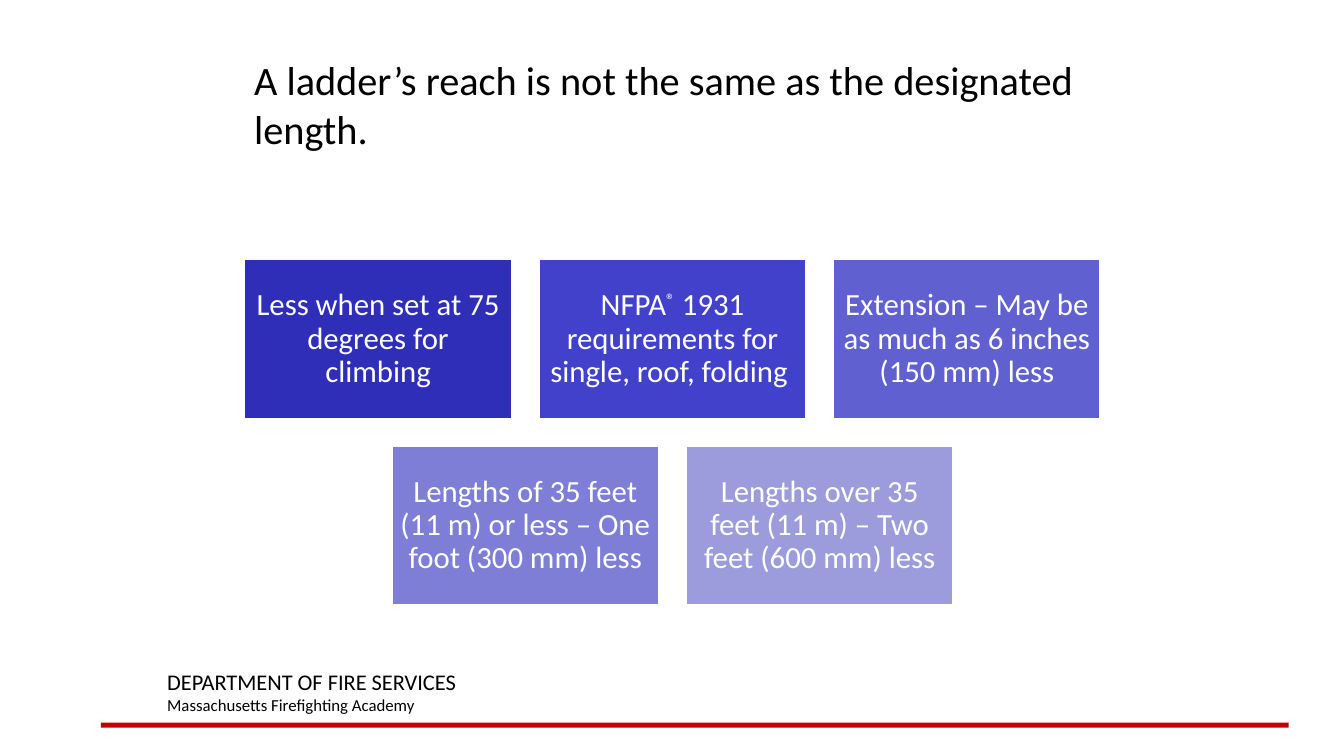
from pptx import Presentation
from pptx.dml.color import RGBColor
from pptx.enum.shapes import MSO_SHAPE
from pptx.enum.text import MSO_ANCHOR, MSO_AUTO_SIZE, PP_ALIGN
from pptx.util import Inches, Pt

RECTANGLE = MSO_SHAPE.RECTANGLE
TOP, MIDDLE = MSO_ANCHOR.TOP, MSO_ANCHOR.MIDDLE
LEFT, CENTER = PP_ALIGN.LEFT, PP_ALIGN.CENTER
NO_FIT = MSO_AUTO_SIZE.NONE

BLACK = RGBColor(0x00, 0x00, 0x00)
WHITE = RGBColor(0xFF, 0xFF, 0xFF)
RED = RGBColor(0xC0, 0x00, 0x00)
BLUES = [
    RGBColor(0x2E, 0x2E, 0xB9),
    RGBColor(0x41, 0x41, 0xCB),
    RGBColor(0x60, 0x60, 0xD0),
    RGBColor(0x7E, 0x7E, 0xD6),
    RGBColor(0x9C, 0x9C, 0xDD),
]

# Card grid, in inches: each row is centred on the same axis
CARD_WIDTH, CARD_HEIGHT = 2.66, 1.59
COLUMN_STEP, ROW_STEP = 2.92, 1.85
GRID_CENTER, GRID_TOP = 6.67, 2.57

# Each card is a list of runs; a lone ® is raised
CARD_ROWS = [
    [
        ["Less when set at 75 degrees for climbing"],
        ["NFPA", "®", " 1931 requirements for single, roof, folding "],
        ["Extension – May be as much as 6 inches (150 mm) less"],
    ],
    [
        ["Lengths of 35 feet (11 m) or less – One foot (300 mm) less"],
        ["Lengths over 35 feet (11 m) – Two feet (600 mm) less"],
    ],
]


class LadderSlide:
    font_name = "Calibri"

    def __init__(self, presentation):
        self.slide = presentation.slides.add_slide(presentation.slide_layouts[5])

    def style(self, run, size, color):
        run.font.name = self.font_name
        run.font.size = Pt(size)
        run.font.color.rgb = color

    def title(self, text, left, top, width, height):
        heading = self.slide.shapes.title
        heading.left, heading.top = Inches(left), Inches(top)
        heading.width, heading.height = Inches(width), Inches(height)
        frame = heading.text_frame
        frame.text = text
        frame.auto_size = NO_FIT
        frame.vertical_anchor = TOP
        frame.paragraphs[0].alignment = LEFT
        self.style(frame.paragraphs[0].runs[0], 28.8, BLACK)

    def rectangle(self, left, top, width, height, fill):
        block = self.slide.shapes.add_shape(
            RECTANGLE, Inches(left), Inches(top), Inches(width), Inches(height))
        block.shadow.inherit = False
        block.fill.solid()
        block.fill.fore_color.rgb = fill
        block.line.fill.background()
        return block

    def card(self, parts, left, top, fill):
        block = self.rectangle(left, top, CARD_WIDTH, CARD_HEIGHT, fill)
        block.line.color.rgb = WHITE
        block.line.width = Pt(2)
        frame = block.text_frame
        frame.word_wrap = True
        frame.vertical_anchor = MIDDLE
        frame.margin_left = frame.margin_right = Inches(0.09)
        frame.margin_top = frame.margin_bottom = Inches(0.09)
        paragraph = frame.paragraphs[0]
        paragraph.alignment = CENTER
        paragraph.line_spacing = 0.9
        for part in parts:
            run = paragraph.add_run()
            run.text = part
            self.style(run, 22, WHITE)
            if part == "®":
                run._r.get_or_add_rPr().set("baseline", "30000")

    def text(self, lines, left, top, width, height):
        frame = self.slide.shapes.add_textbox(
            Inches(left), Inches(top), Inches(width), Inches(height)).text_frame
        frame.word_wrap = True
        frame.text = "\n".join(line for line, _ in lines)
        for paragraph, (_, size) in zip(frame.paragraphs, lines):
            self.style(paragraph.runs[0], size, BLACK)


def main():
    presentation = Presentation()
    presentation.slide_width = Inches(13.33)
    presentation.slide_height = Inches(7.5)
    ladder = LadderSlide(presentation)

    # Footer
    ladder.rectangle(1, 7.17, 11.78, 0.05, RED)
    ladder.text([("DEPARTMENT OF FIRE SERVICES", 16),
                 ("Massachusetts Firefighting Academy", 12)],
                1.56, 6.58, 5.67, 0.57)

    # Title
    ladder.title("A ladder’s reach is not the same as the designated length.",
                 2.42, 0.5, 8.73, 1)

    # Cards
    blues = iter(BLUES)
    for row, cards in enumerate(CARD_ROWS):
        row_width = (len(cards) - 1) * COLUMN_STEP + CARD_WIDTH
        row_left = GRID_CENTER - row_width / 2
        for column, parts in enumerate(cards):
            ladder.card(parts, row_left + column * COLUMN_STEP,
                        GRID_TOP + row * ROW_STEP, next(blues))

    presentation.save("out.pptx")


if __name__ == "__main__":
    main()
